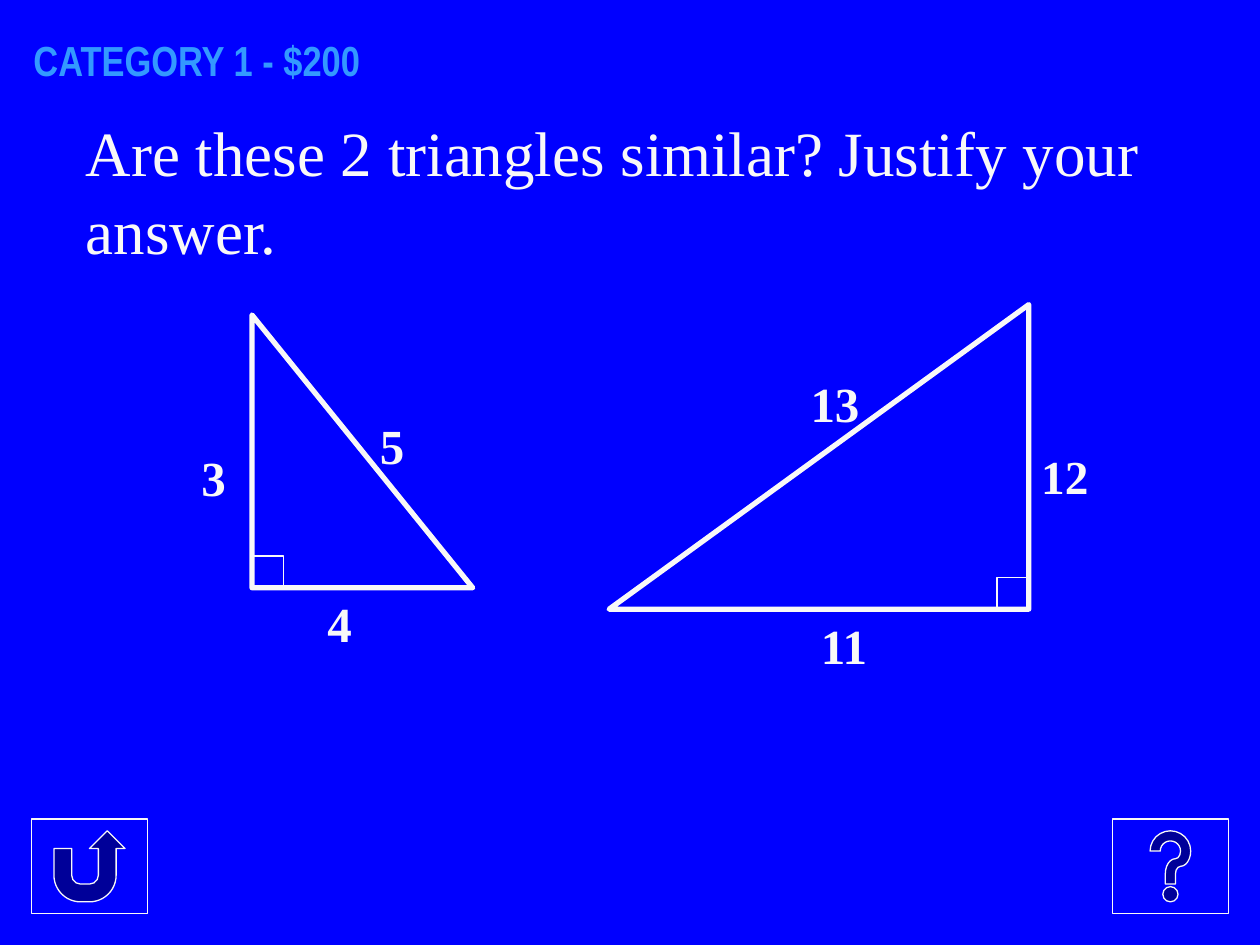
from dataclasses import dataclass

import pptx
import pptx.dml.color
import pptx.enum.shapes
import pptx.enum.text
import pptx.util
from pptx.util import Cm

SHAPE = pptx.enum.shapes.MSO_SHAPE
ANCHOR = pptx.enum.text.MSO_ANCHOR
ALIGN = pptx.enum.text.PP_ALIGN


@dataclass(frozen=True)
class Theme:
    blue: str = "0000FF"
    white: str = "F8F8F8"
    heading: str = "3399FF"
    title_font: str = "Arial Narrow"
    text_font: str = "Times New Roman"
    title_size: float = 24
    question_size: float = 36
    label_size: float = 28
    thin: float = 0.75
    thick: float = 3


@dataclass(frozen=True)
class Label:
    text: str
    left: float
    top: float
    width: float
    size: float = Theme.label_size


@dataclass(frozen=True)
class Triangle:
    """Right triangle as seen on the slide, in centimetres."""
    left: float
    top: float
    width: float
    height: float
    corner_at_right: bool
    labels: tuple[Label, ...]


THEME = Theme()
LABEL_HEIGHT = 1.45
CORNER = 0.64
BUTTON_TOP, BUTTON_WIDTH, BUTTON_HEIGHT = 16.51, 2.33, 1.91

TRIANGLES = (
    Triangle(5.08, 6.35, 4.45, 5.5, False, (
        Label("5", 7.41, 8.26, 1.27),
        Label("4", 6.35, 11.85, 1.27),
        Label("3", 3.81, 8.89, 1.27),
    )),
    Triangle(12.28, 6.14, 8.46, 6.14, True, (
        Label("12", 20.74, 8.89, 1.48, 27),
        Label("13", 16.09, 7.41, 1.9),
        Label("11", 16.3, 12.28, 1.9),
    )),
)


def rgb(value: str) -> pptx.dml.color.RGBColor:
    return pptx.dml.color.RGBColor.from_string(value)


def format_text(p, text: str, font: str, size: float, color: str, bold: bool) -> None:
    p.text = text
    p.alignment = ALIGN.LEFT
    p.font.name = font
    p.font.size = pptx.util.Pt(size)
    p.font.bold = bold
    p.font.color.rgb = rgb(color)


def add_box(shapes, kind, left: float, top: float, width: float, height: float,
            fill: str | None = None, line: float | None = None):
    """Add a preset shape; without a fill colour or line width it has none."""
    sp = shapes.add_shape(kind, Cm(left), Cm(top), Cm(width), Cm(height))
    sp.shadow.inherit = False
    if fill:
        sp.fill.solid()
        sp.fill.fore_color.rgb = rgb(fill)
    else:
        sp.fill.background()
    if line:
        sp.line.color.rgb = rgb(THEME.white)
        sp.line.width = pptx.util.Pt(line)
    else:
        sp.line.fill.background()
    return sp


def add_question(shapes, text: str) -> None:
    sp = add_box(shapes, SHAPE.RECTANGLE, 1.48, 2.12, 22.65, 12.49, fill=THEME.blue)
    tf = sp.text_frame
    tf.word_wrap = True
    tf.vertical_anchor = ANCHOR.TOP
    p = tf.paragraphs[0]
    format_text(p, text, THEME.text_font, THEME.question_size, THEME.white, False)
    p.space_before = pptx.util.Pt(3)
    p.line_spacing = 1.03


def format_title(title, text: str) -> None:
    title.left, title.top = Cm(0.42), Cm(0.64)
    title.width, title.height = Cm(21.59), Cm(1.27)
    tf = title.text_frame
    tf.vertical_anchor = ANCHOR.MIDDLE
    tf.margin_top = 0
    format_text(tf.paragraphs[0], text, THEME.title_font, THEME.title_size,
                THEME.heading, True)


def add_label(shapes, label: Label) -> None:
    sp = shapes.add_textbox(Cm(label.left), Cm(label.top), Cm(label.width),
                            Cm(LABEL_HEIGHT))
    tf = sp.text_frame
    tf.word_wrap = True
    p = tf.paragraphs[0]
    format_text(p, label.text, THEME.text_font, label.size, THEME.white, True)
    p.space_before = pptx.util.Pt(3)


def add_triangle(shapes, tri: Triangle) -> None:
    """Group the triangle with its labels; a quarter turn puts its corner at right."""
    group = shapes.add_group_shape().shapes
    width, height = tri.width, tri.height
    if tri.corner_at_right:
        width, height = height, width
    left = tri.left + (tri.width - width) / 2
    top = tri.top + (tri.height - height) / 2
    sp = add_box(group, SHAPE.RIGHT_TRIANGLE, left, top, width, height, line=THEME.thick)
    sp.rotation = 270 if tri.corner_at_right else 0
    for label in tri.labels:
        add_label(group, label)


def add_right_angle(shapes, tri: Triangle) -> None:
    left = tri.left + (tri.width - CORNER if tri.corner_at_right else 0)
    top = tri.top + tri.height - CORNER
    add_box(shapes, SHAPE.RECTANGLE, left, top, CORNER, CORNER, line=THEME.thin)


def main() -> None:
    prs = pptx.Presentation()
    prs.slide_width, prs.slide_height = Cm(25.4), Cm(19.05)
    s = prs.slides.add_slide(prs.slide_layouts[5])
    s.background.fill.solid()
    s.background.fill.fore_color.rgb = rgb(THEME.blue)

    format_title(s.shapes.title, "CATEGORY 1 - $200")
    add_question(s.shapes, "Are these 2 triangles similar? Justify your answer.")
    for kind, left in ((SHAPE.ACTION_BUTTON_HELP, 22.43),
                       (SHAPE.ACTION_BUTTON_RETURN, 0.64)):
        add_box(s.shapes, kind, left, BUTTON_TOP, BUTTON_WIDTH, BUTTON_HEIGHT,
                fill=THEME.blue, line=THEME.thin)
    for tri in TRIANGLES:
        add_triangle(s.shapes, tri)
    for tri in TRIANGLES:
        add_right_angle(s.shapes, tri)

    prs.save("out.pptx")


if __name__ == "__main__":
    main()
